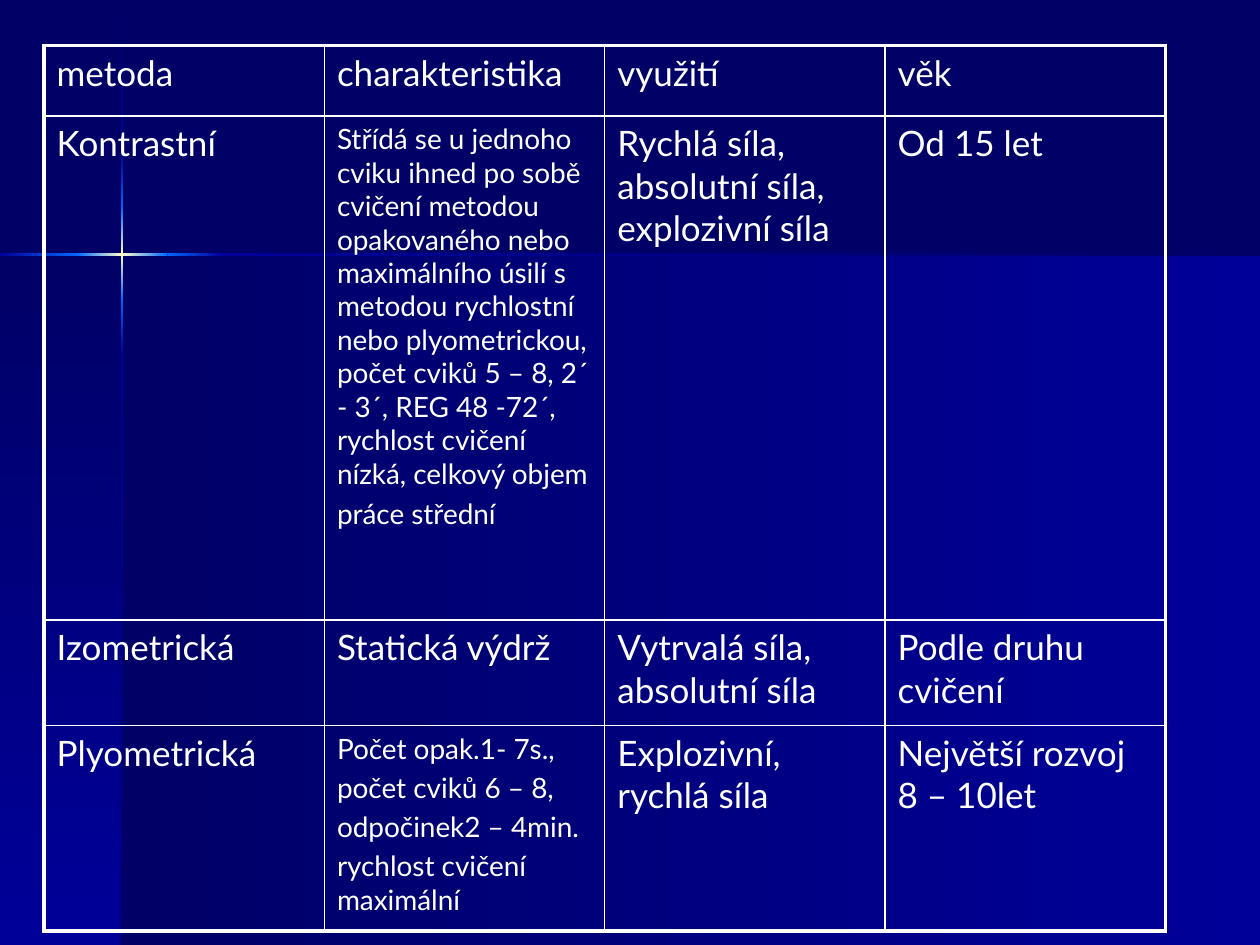
from copy import deepcopy
from dataclasses import dataclass
from itertools import pairwise

from pptx import Presentation
from pptx import util as u
from pptx.dml.color import RGBColor
from pptx.enum import shapes
from pptx.oxml import parse_xml
from pptx.oxml.ns import nsdecls


@dataclass(frozen=True)
class Theme:
    night: str = "000066"
    navy: str = "000099"
    azure: str = "0066FF"
    glow: str = "FFFFCC"
    white: str = "FFFFFF"
    font: str = "Lato"
    body: int = 20
    small: int = 16
    thick: float = 2.25
    thin: float = 1


class Deck:
    """Places elements on a grid of 100 columns and 75 rows."""

    def __init__(self, theme):
        self.t = theme
        self.prs = Presentation()
        self.prs.slide_width, self.prs.slide_height = u.Inches(10), u.Inches(7.5)
        self.s = self.prs.slides.add_slide(self.prs.slide_layouts[6])
        fill = self.s.background.fill
        fill.solid()
        fill.fore_color.rgb = RGBColor.from_string(theme.night)

    def x(self, columns):
        return round(self.prs.slide_width * columns / 100)

    def y(self, rows):
        return round(self.prs.slide_height * rows / 75)

    def panel(self, left, top, right, bottom, colors, down=False):
        """Draw a box whose colours run rightwards, or downwards."""
        sp = self.s.shapes.add_shape(
            shapes.MSO_SHAPE.RECTANGLE, self.x(left), self.y(top),
            self.x(right - left), self.y(bottom - top))
        sp.shadow.inherit = False
        sp.line.fill.background()
        sp.fill.gradient()
        sp.fill.gradient_angle = 270 if down else 0
        stops = sp.element.spPr.find(".//{*}gsLst")
        for _ in colors[2:]:
            stops.append(deepcopy(stops[-1]))
        for i, (stop, color) in enumerate(zip(sp.fill.gradient_stops, colors)):
            stop.position = i / (len(colors) - 1)
            stop.color.rgb = RGBColor.from_string(color)

    def ray(self, center, marks, fades, down=False):
        """Draw a thin line of gradient pieces between the marks."""
        near, far = center - 0.1, center + 0.1
        for (start, end), colors in zip(pairwise(marks), fades):
            box = (near, start, far, end) if down else (start, near, end, far)
            self.panel(*box, colors, down)

    def table(self, left, top, width, heights, rows):
        n = len(rows[0])
        frame = self.s.shapes.add_table(
            len(rows), n, self.x(left), self.y(top), self.x(width), self.y(sum(heights)))
        tbl = frame.table
        tbl.first_row = tbl.horz_banding = False
        for column in tbl.columns:
            column.width = self.x(width / n)
        for i, (row, height) in enumerate(zip(rows, heights)):
            tbl.rows[i].height = self.y(height)
            for j, paragraphs in enumerate(row):
                cell = tbl.cell(i, j)
                cell.fill.background()
                self.borders(cell, {"L": j == 0, "R": j == n - 1,
                                    "T": i == 0, "B": i == len(rows) - 1})
                self.add_text(cell.text_frame, paragraphs)

    def borders(self, cell, outer):
        tc_pr = cell._tc.get_or_add_tcPr()
        for i, (side, is_outer) in enumerate(outer.items()):
            width = u.Pt(self.t.thick if is_outer else self.t.thin)
            tc_pr.insert(i, parse_xml(
                f'<a:ln{side} {nsdecls("a")} w="{width}"><a:solidFill>'
                f'<a:srgbClr val="{self.t.white}"/></a:solidFill></a:ln{side}>'))

    def add_text(self, tf, paragraphs):
        for i, runs in enumerate(paragraphs):
            p = tf.add_paragraph() if i else tf.paragraphs[0]
            p.space_before = u.Pt(0.2 * runs[0][1])
            for words, size in runs:
                r = p.add_run()
                r.text = words
                r.font.name, r.font.size = self.t.font, u.Pt(size)
                r.font.color.rgb = RGBColor.from_string(self.t.white)


def main():
    t = Theme()
    deck = Deck(t)

    star_x, star_y = 9.7, 20.2
    deck.panel(star_x, star_y, 100, 75, [t.night, t.navy])
    deck.panel(0, star_y, star_x, 75, [t.night, t.navy], down=True)
    fades = [[t.night, t.navy], [t.navy, t.azure], [t.azure, t.glow, t.azure],
             [t.azure, t.navy], [t.navy, t.night]]
    deck.ray(star_x, [0.1, 12.1, 16.5, 23.8, 28.2, 75], fades, down=True)
    deck.ray(star_y, [0, 6.1, 13.3, 17.7, 100], fades[1:])

    def body(words):
        return [[(words, t.body)]]

    contrast = [[
        ("Střídá se u jednoho cviku ihned po sobě cvičení metodou opakovaného nebo "
         "maximálního úsilí s metodou rychlostní nebo plyometrickou, počet cviků "
         "5 – 8, 2´ - 3´, REG 48 -72´, rychlost cvičení nízká, celkový objem "
         "práce střední", t.small),
        (" ", t.body)]]
    plyometric = [[(words, t.small)] for words in (
        "Počet opak.1- 7s.,", "počet cviků 6 – 8,", "odpočinek2 – 4min.",
        "rychlost cvičení maximální")]
    deck.table(3.5, 3.6, 89, [5.6, 40, 8.4, 16.3], [
        [body(w) for w in ("metoda", "charakteristika", "využití", "věk")],
        [body("Kontrastní"), contrast,
         body("Rychlá síla, absolutní síla, explozivní síla"), body("Od 15 let")],
        [body(w) for w in ("Izometrická", "Statická výdrž",
                           "Vytrvalá síla, absolutní síla", "Podle druhu cvičení")],
        [body("Plyometrická"), plyometric,
         body("Explozivní, rychlá síla"), body("Největší rozvoj 8 – 10let")],
    ])
    deck.prs.save("out.pptx")


if __name__ == "__main__":
    main()
